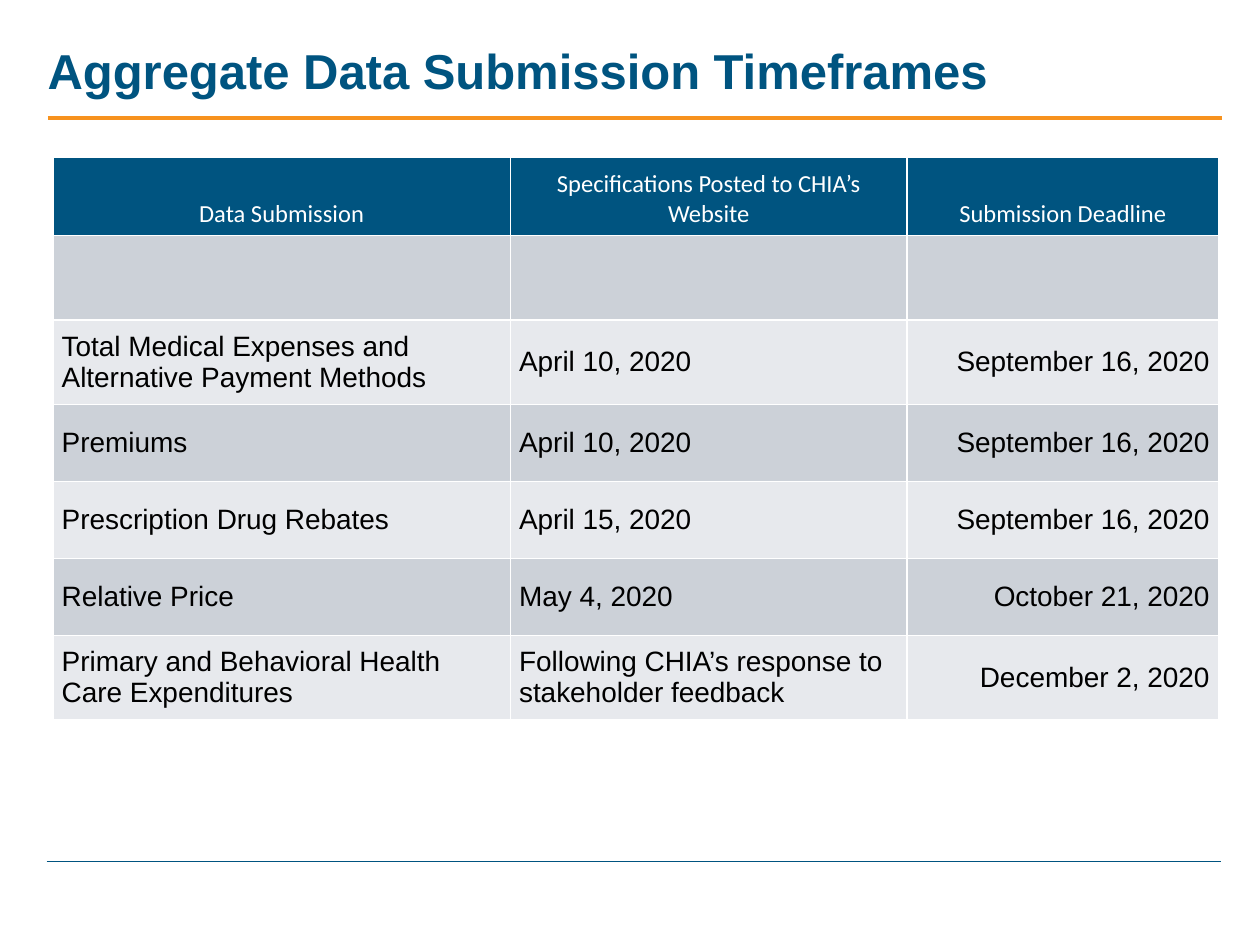
"""Build the slide of aggregate data submission timeframes."""
from lxml import etree
from pptx import Presentation
from pptx.dml.color import RGBColor
from pptx.enum.shapes import MSO_CONNECTOR
from pptx.enum.text import MSO_ANCHOR, PP_ALIGN
from pptx.oxml import parse_xml
from pptx.oxml.ns import nsdecls, qn
from pptx.util import Inches, Pt

STRAIGHT = MSO_CONNECTOR.STRAIGHT
BOTTOM, MIDDLE = MSO_ANCHOR.BOTTOM, MSO_ANCHOR.MIDDLE
LEFT, CENTER, RIGHT = PP_ALIGN.LEFT, PP_ALIGN.CENTER, PP_ALIGN.RIGHT

BLUE, ORANGE, WHITE, BLACK = "005480", "F7921E", "FFFFFF", "000000"
BANDS = ["CCD1D8", "E7E9ED"]
TITLE_FONT = {"name": "Arial", "size": Pt(28), "bold": True}
HEADER_FONT = {"name": "Calibri", "size": Pt(14), "bold": False}
BODY_FONT = {"name": "Arial", "size": Pt(16), "bold": False}
BODY_MARGINS = ["margin_left", "margin_right", "margin_top", "margin_bottom"]
COLUMN_WIDTHS = [3.63, 3.15, 2.47]
ROW_HEIGHTS = [0.62, 0.67, 0.67, 0.61, 0.61, 0.61, 0.67]
ROWS = [
    ["Data Submission", "Specifications Posted to CHIA’s Website", "Submission Deadline"],
    ["", "", ""],
    ["Total Medical Expenses and Alternative Payment Methods", "April 10, 2020", "September 16, 2020"],
    ["Premiums", "April 10, 2020", "September 16, 2020"],
    ["Prescription Drug Rebates", "April 15, 2020", "September 16, 2020"],
    ["Relative Price", "May 4, 2020", "October 21, 2020"],
    ["Primary and Behavioral Health Care Expenditures",
     "Following CHIA’s response to stakeholder feedback", "December 2, 2020"],
]


def color(value):
    return RGBColor.from_string(value)


def write(para, text, font, font_color):
    span = para.add_run()
    span.text = text
    for name, value in font.items():
        setattr(span.font, name, value)
    span.font.color.rgb = color(font_color)


deck = Presentation()
deck.slide_width, deck.slide_height = Inches(10), Inches(7.5)
page = deck.slides.add_slide(deck.slide_layouts[6])

for left, top, line_color, width in [(0.37, 6.84, BLUE, 0.75), (0.38, 0.94, ORANGE, 2.25)]:
    rule = page.shapes.add_connector(
        STRAIGHT, Inches(left), Inches(top), Inches(left + 9.32), Inches(top))
    rule.line.color.rgb = color(line_color)
    rule.line.width = Pt(width)
    etree.SubElement(rule.element.spPr, qn("a:effectLst"))

title = page.shapes.add_textbox(Inches(0.28), Inches(0.27), Inches(9.4), Inches(0.57))
title.text_frame.word_wrap = True
title.text_frame.vertical_anchor = BOTTOM
write(title.text_frame.paragraphs[0], "Aggregate Data Submission Timeframes", TITLE_FONT, BLUE)

table = page.shapes.add_table(
    len(ROWS), len(COLUMN_WIDTHS), Inches(0.42), Inches(1.25),
    Inches(sum(COLUMN_WIDTHS)), Inches(sum(ROW_HEIGHTS))).table
for column, width in zip(table.columns, COLUMN_WIDTHS):
    column.width = Inches(width)

for row_index, (texts, height) in enumerate(zip(ROWS, ROW_HEIGHTS)):
    table.rows[row_index].height = Inches(height)
    is_header = row_index == 0
    for column_index, text in enumerate(texts):
        cell = table.cell(row_index, column_index)
        cell.fill.solid()
        cell.fill.fore_color.rgb = color(BLUE if is_header else BANDS[(row_index - 1) % 2])
        cell.vertical_anchor = BOTTOM if is_header else MIDDLE
        properties = cell._tc.get_or_add_tcPr()
        for position, side in enumerate(["lnL", "lnR", "lnT", "lnB"]):
            properties.insert(position, parse_xml(
                f'<a:{side} {nsdecls("a")} w="{Pt(1)}"><a:solidFill>'
                f'<a:srgbClr val="{WHITE}"/></a:solidFill></a:{side}>'))
        if not text:
            continue
        para = cell.text_frame.paragraphs[0]
        if is_header:
            para.alignment = CENTER
            write(para, text, HEADER_FONT, WHITE)
        else:
            for margin in BODY_MARGINS:
                setattr(cell, margin, Inches(0.07))
            para.alignment = RIGHT if column_index == 2 else LEFT
            write(para, text, BODY_FONT, BLACK)

deck.save("out.pptx")
